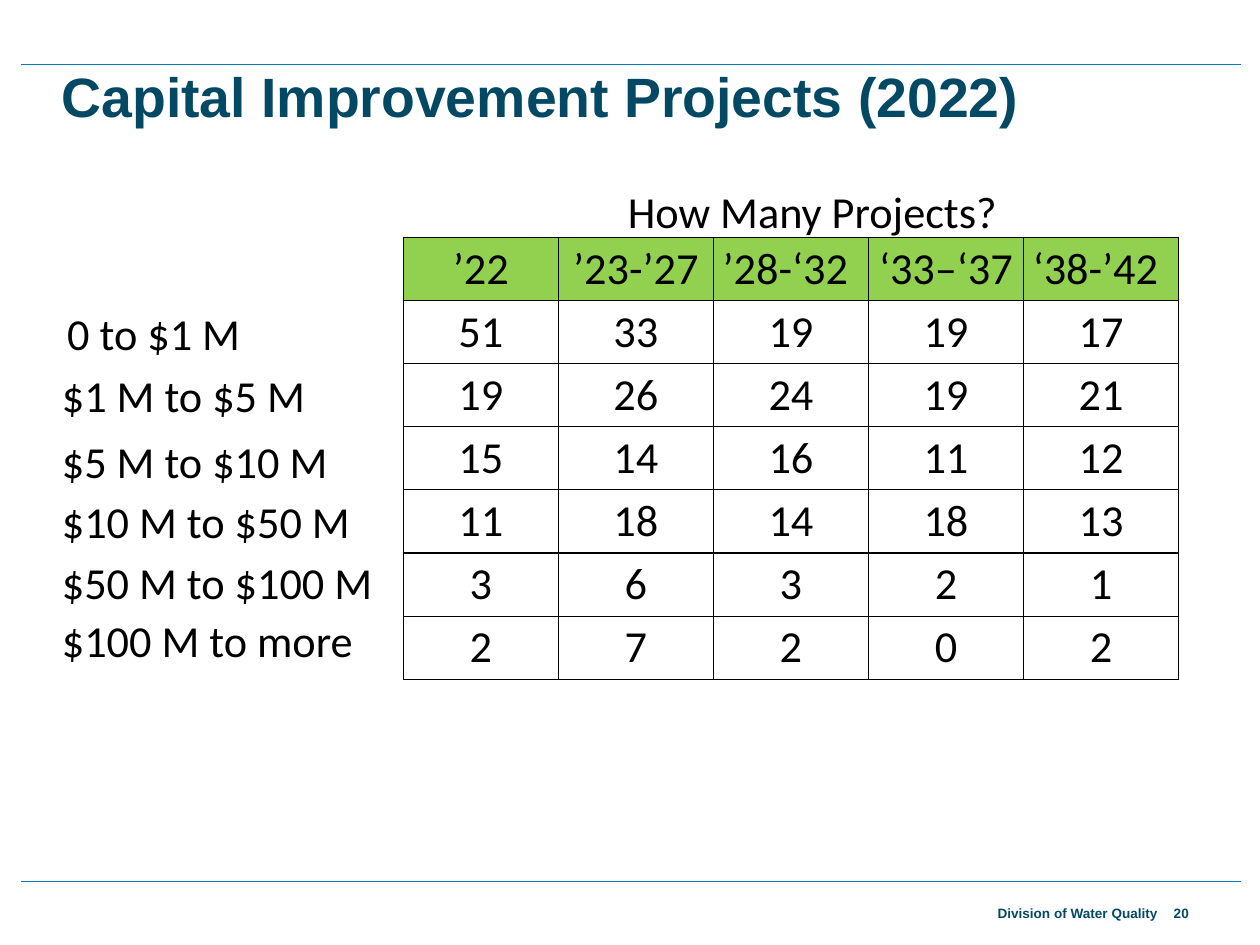
"""Build the Capital Improvement Projects slide with its table of project counts."""
from lxml import etree
from pptx import Presentation
from pptx.dml.color import RGBColor
from pptx.enum import shapes, text
from pptx.oxml import ns
from pptx.util import Pt

COLORS = {"navy": "034963", "blue": "0080B7", "green": "92D050", "black": "000000"}
PERIODS = ["’22", "’23-’27", "’28-‘32", "‘33–‘37", "‘38-’42"]
SHIFTED_PERIODS = {"’28-‘32", "‘38-’42"}
COUNTS = [
    [51, 33, 19, 19, 17],
    [19, 26, 24, 19, 21],
    [15, 14, 16, 11, 12],
    [11, 18, 14, 18, 13],
    [3, 6, 3, 2, 1],
    [2, 7, 2, 0, 2],
]
COST_RANGES = [
    ("0 to $1 M", 47.5, 245.5),
    ("$1 M to $5 M", 43.2, 296),
    ("$5 M to $10 M", 43.2, 349.6),
    ("$10 M to $50 M", 43.2, 398),
    ("$50 M to $100 M", 43.2, 447.5),
    ("$100 M to more", 43.2, 495),
]
RULE_HEIGHTS = [52.2, 716.4]
TABLE_LEFT, TABLE_TOP = 327.8, 193
COLUMN_WIDTH, ROW_HEIGHT = 126, 51.3
LEFT, CENTER, RIGHT = text.PP_ALIGN.LEFT, text.PP_ALIGN.CENTER, text.PP_ALIGN.RIGHT
TOP, MIDDLE = text.MSO_ANCHOR.TOP, text.MSO_ANCHOR.MIDDLE


def color(name):
    return RGBColor.from_string(COLORS[name])


def write(frame, words, size, font, ink, align, bold=False):
    para = frame.paragraphs[0]
    para.alignment = align
    span = para.add_run()
    span.text = words
    span.font.size = Pt(size)
    span.font.name = font
    span.font.bold = bold
    span.font.color.rgb = color(ink)


def add_text(page, words, area, size, font="Calibri", ink="black",
             align=LEFT, anchor=TOP, bold=False):
    box = page.shapes.add_textbox(*map(Pt, area))
    box.text_frame.word_wrap = True
    box.text_frame.vertical_anchor = anchor
    write(box.text_frame, words, size, font, ink, align, bold)
    return box


def add_rule(page, y):
    rule = page.shapes.add_connector(
        shapes.MSO_CONNECTOR.STRAIGHT, Pt(17), Pt(y), Pt(1008.4), Pt(y))
    rule.line.color.rgb = color("blue")
    rule.line.width = Pt(0.5)
    etree.SubElement(rule._element.spPr, ns.qn("a:effectLst"))


def style_cell(cell, header):
    properties = cell._tc.get_or_add_tcPr()
    for side in ("lnL", "lnR", "lnT", "lnB"):
        border = etree.SubElement(properties, ns.qn(f"a:{side}"), w=str(Pt(1)))
        fill = etree.SubElement(border, ns.qn("a:solidFill"))
        etree.SubElement(fill, ns.qn("a:srgbClr"), val=COLORS["black"])
    if header:
        cell.fill.solid()
        cell.fill.fore_color.rgb = color("green")
    else:
        cell.fill.background()


def add_counts_table(page):
    rows = [PERIODS] + COUNTS
    table = page.shapes.add_table(
        len(rows), len(PERIODS), Pt(TABLE_LEFT), Pt(TABLE_TOP),
        Pt(COLUMN_WIDTH * len(PERIODS)), Pt(ROW_HEIGHT * len(rows))).table
    table.horz_banding = False
    table.first_row = False
    for column in table.columns:
        column.width = Pt(COLUMN_WIDTH)
    for row_index, values in enumerate(rows):
        table.rows[row_index].height = Pt(ROW_HEIGHT)
        for column_index, value in enumerate(values):
            cell = table.cell(row_index, column_index)
            write(cell.text_frame, str(value), 36, "Calibri", "black", CENTER)
            style_cell(cell, header=row_index == 0)
            if value in SHIFTED_PERIODS:
                cell.margin_left, cell.margin_right = Pt(3), Pt(12)


def main():
    deck = Presentation()
    deck.slide_width, deck.slide_height = Pt(1024), Pt(768)
    page = deck.slides.add_slide(deck.slide_layouts[6])
    for y in RULE_HEIGHTS:
        add_rule(page, y)
    label = {"size": 11, "font": "Arial", "ink": "navy", "anchor": MIDDLE, "bold": True}
    footer = add_text(page, "Division of Water Quality", (806.3, 731.5, 139, 21.6),
                      align=RIGHT, **label)
    footer.text_frame.word_wrap = False
    footer.text_frame.margin_left = footer.text_frame.margin_right = Pt(4.3)
    add_text(page, "Capital Improvement Projects (2022)", (43, 47.6, 939.6, 60),
             **{**label, "size": 45})
    add_counts_table(page)
    add_text(page, "20", (946.8, 716.4, 61.2, 51.6), **label)
    for words, left, top in COST_RANGES:
        add_text(page, words, (left, top, 284, 51.4), 36)
    add_text(page, "How Many Projects?", (476.6, 146.2, 367.2, 51.4), 36, align=CENTER)
    deck.save("out.pptx")


if __name__ == "__main__":
    main()
